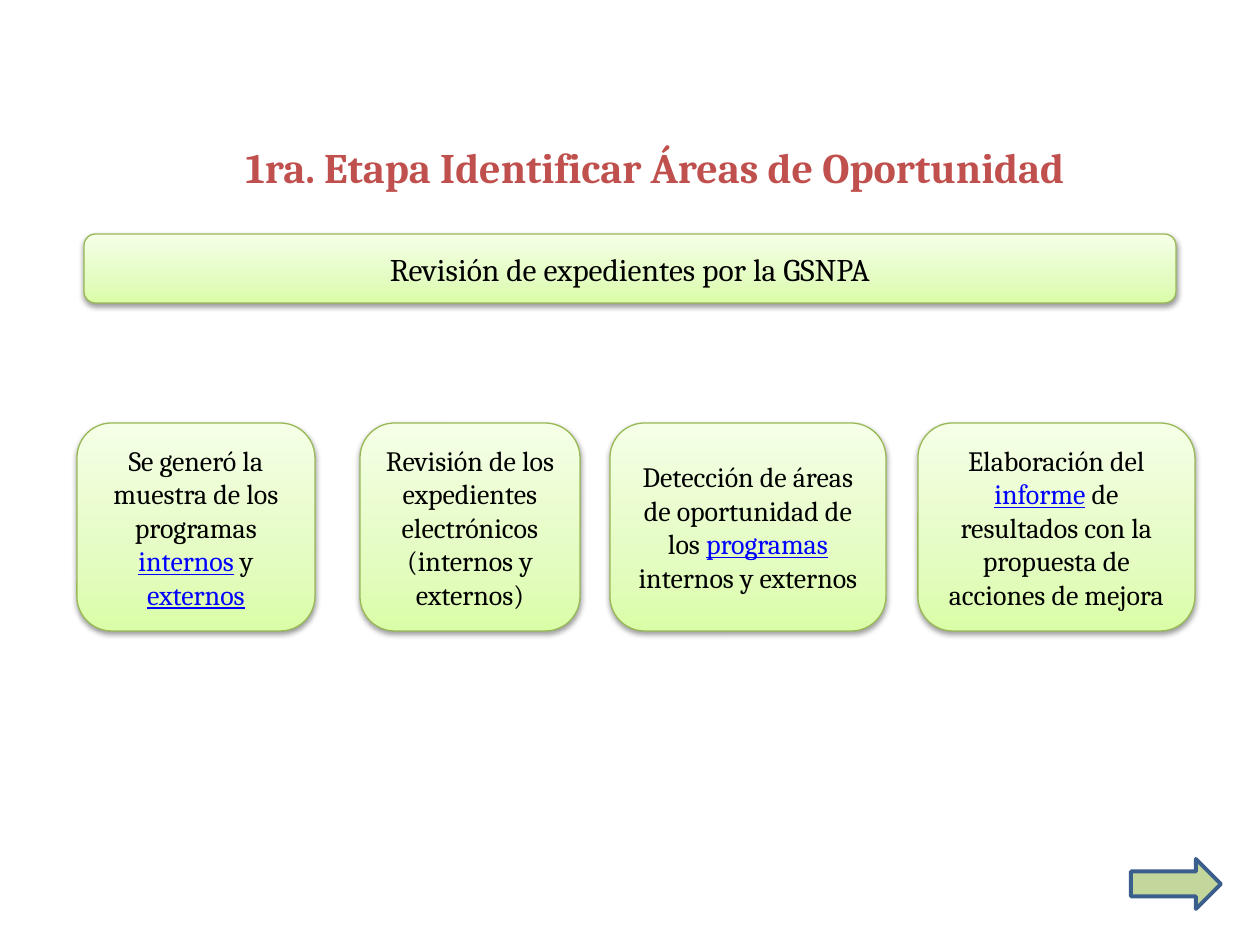
from copy import deepcopy

from lxml import etree
from pptx import Presentation
from pptx.dml.color import RGBColor
from pptx.enum.shapes import MSO_SHAPE
from pptx.enum.text import MSO_ANCHOR, PP_ALIGN
from pptx.oxml.ns import qn
from pptx.util import Emu, Pt

ROUNDED = MSO_SHAPE.ROUNDED_RECTANGLE
RIGHT_ARROW = MSO_SHAPE.RIGHT_ARROW
CENTER = PP_ALIGN.CENTER
MIDDLE = MSO_ANCHOR.MIDDLE

PX = 914400 // 126
THEME = {
    "font": "Cambria",
    "title_size": 24, "banner_size": 18, "step_size": 16,
    "title": "C0504D", "text": "000000", "link": "0000FF",
    "gradient": [(0, "DAFDA7"), (0.35, "E4FCC2"), (1, "F5FFE7")],
    "box_line": "98B955",
    "arrow_fill": "C3D69B", "arrow_line": "3A5F8C",
}


def color(name):
    return RGBColor.from_string(THEME[name])


def add_green_box(slide, bounds, paragraphs, size):
    """Add a shaded box; each paragraph is a list of (text, is_link) spans."""
    box = slide.shapes.add_shape(ROUNDED, *(Emu(n * PX) for n in bounds))
    box.fill.gradient()
    box.fill.gradient_angle = 90
    stop_list = box._element.spPr.find(".//" + qn("a:gsLst"))
    stop_list.append(deepcopy(stop_list[0]))
    for stop, (position, shade) in zip(box.fill.gradient_stops, THEME["gradient"]):
        stop.position = position
        stop.color.rgb = RGBColor.from_string(shade)
    box.line.color.rgb = color("box_line")
    box.line.width = Pt(0.75)

    box.shadow.inherit = False
    effects = box._element.spPr.find(qn("a:effectLst"))
    shadow = etree.SubElement(effects, qn("a:outerShdw"), blurRad="40000",
                              dist="20000", dir="5400000", rotWithShape="0")
    shade = etree.SubElement(shadow, qn("a:srgbClr"), val="000000")
    etree.SubElement(shade, qn("a:alpha"), val="38000")

    frame = box.text_frame
    frame.word_wrap = True
    frame.vertical_anchor = MIDDLE
    for index, spans in enumerate(paragraphs):
        para = frame.add_paragraph() if index else frame.paragraphs[0]
        para.alignment = CENTER
        para.font.name = THEME["font"]
        para.font.size = Pt(size)
        for text, is_link in spans:
            span = para.add_run()
            span.text = text
            span.font.color.rgb = color("link" if is_link else "text")
            if is_link:
                span.font.underline = True


deck = Presentation()
deck.slide_width = Emu(1260 * PX)
deck.slide_height = Emu(945 * PX)
slide = deck.slides.add_slide(deck.slide_layouts[6])

# Title
title = slide.shapes.add_textbox(*(Emu(n * PX) for n in (130, 135, 1050, 63)))
title.text_frame.word_wrap = True
para = title.text_frame.paragraphs[0]
para.text = "1ra. Etapa Identificar Áreas de Oportunidad"
para.alignment = CENTER
para.font.name = THEME["font"]
para.font.size = Pt(THEME["title_size"])
para.font.bold = True
para.font.color.rgb = color("title")

# Banner
add_green_box(slide, (84, 234, 1092, 69),
              [[("Revisión de expedientes por la GSNPA", False)]],
              THEME["banner_size"])

# Steps: left, width, paragraphs
STEP_TOP, STEP_HEIGHT = 423, 208
steps = [
    (77, 238, [[("Se generó la muestra de los programas ", False),
                ("internos", True), (" y ", False), ("externos", True)]]),
    (360, 220, [[("Revisión de los expedientes electrónicos (internos y externos)",
                  False)]]),
    (610, 276, [[("Detección de áreas de oportunidad de los ", False),
                 ("programas", True)],
                [("internos y externos", False)]]),
    (918, 277, [[("Elaboración del ", False), ("informe", True),
                 (" de resultados con la propuesta de acciones de mejora", False)]]),
]
for left, width, paragraphs in steps:
    add_green_box(slide, (left, STEP_TOP, width, STEP_HEIGHT), paragraphs,
                  THEME["step_size"])

# Next arrow
arrow = slide.shapes.add_shape(RIGHT_ARROW,
                               *(Emu(n * PX) for n in (1131, 859, 90, 50)))
arrow.shadow.inherit = False
arrow.fill.solid()
arrow.fill.fore_color.rgb = color("arrow_fill")
arrow.line.color.rgb = color("arrow_line")
arrow.line.width = Pt(2.25)

deck.save("out.pptx")
